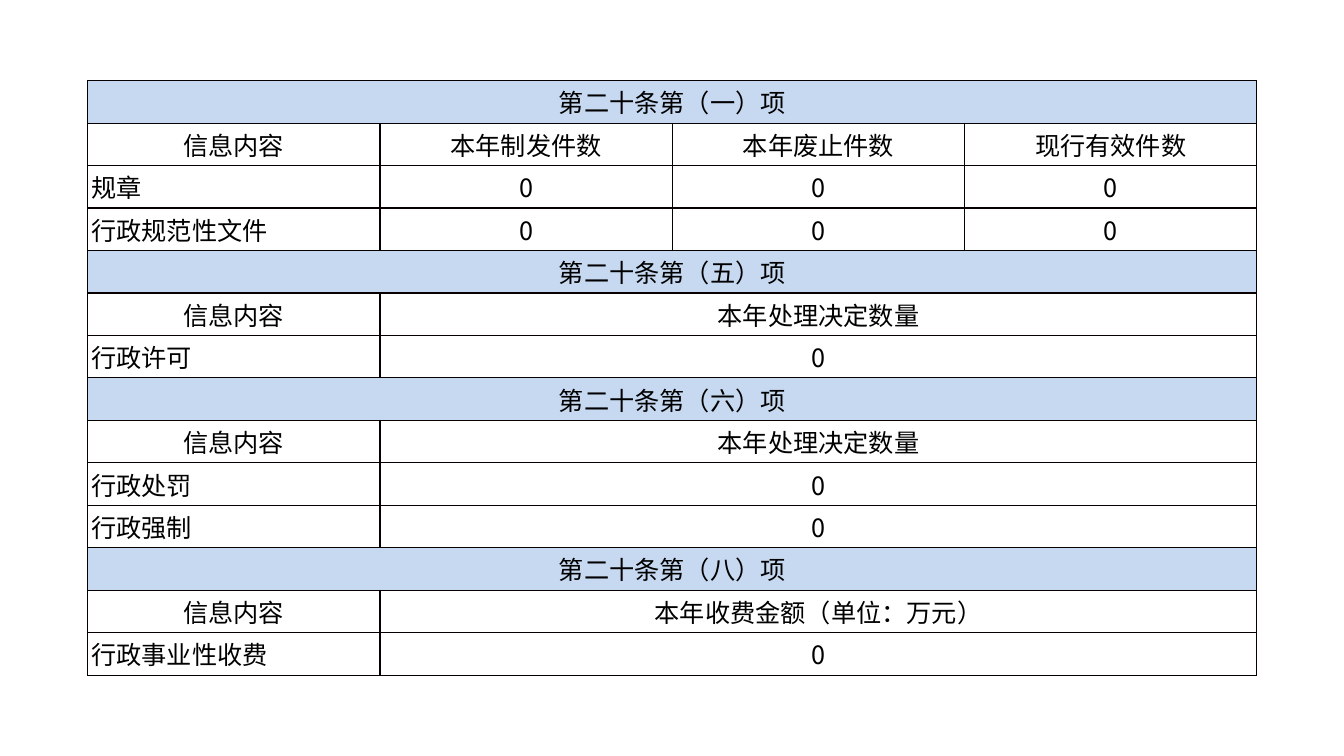
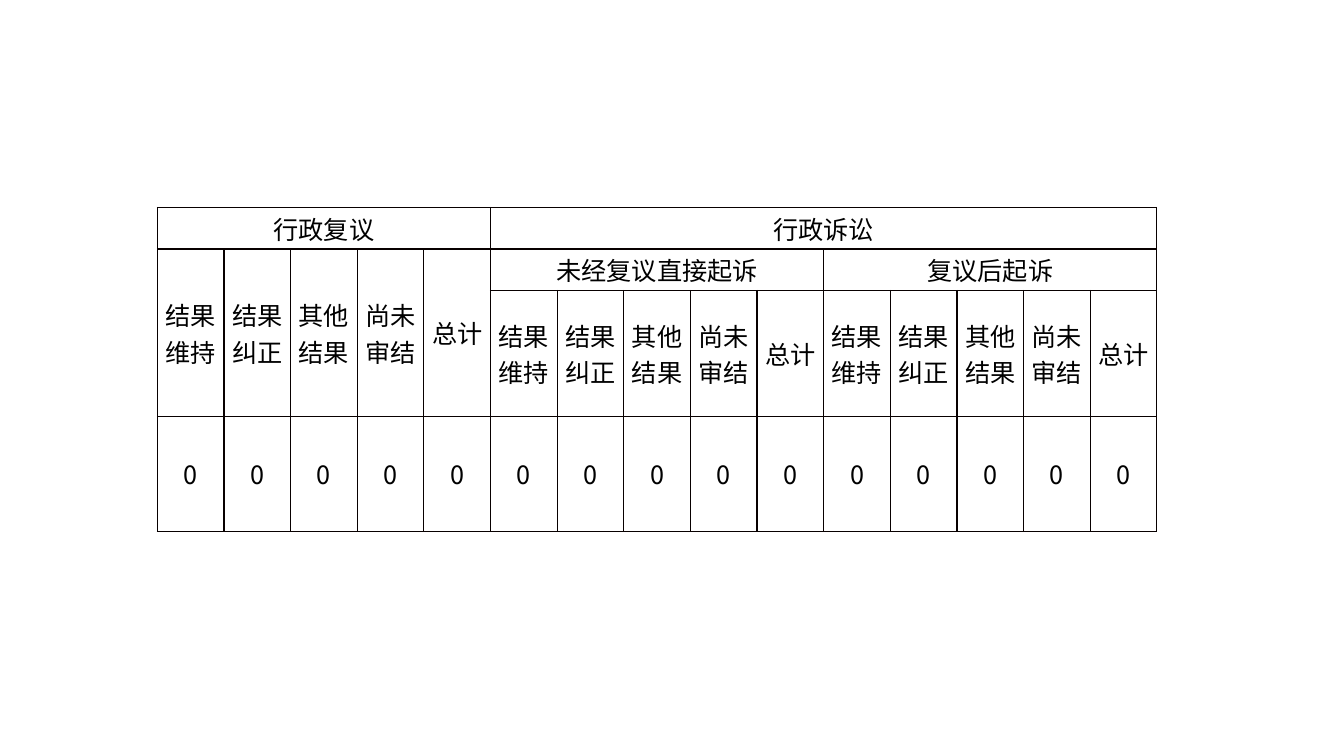
"""Build two slides of annual government disclosure statistics tables."""
from dataclasses import dataclass

from lxml import etree
from pptx import Presentation
from pptx.dml.color import RGBColor
from pptx.enum.text import MSO_ANCHOR, PP_ALIGN
from pptx.oxml.ns import qn
from pptx.slide import Slide
from pptx.table import Table, _Cell
from pptx.util import Pt

CENTER, LEFT = PP_ALIGN.CENTER, PP_ALIGN.LEFT
MIDDLE = MSO_ANCHOR.MIDDLE
COLORS = {"text": "000000", "border": "080000", "band": "C6D9F1"}
FONT = "Noto Sans CJK SC"
FONT_SIZE = 18
BORDER_WIDTH = 1
BLANK_LAYOUT = 6
RESULTS = ["结果维持", "结果纠正", "其他结果", "尚未审结", "总计"]


@dataclass(frozen=True)
class Grid:
    """Position and track sizes of a table, in points."""
    left: float
    top: float
    column_width: float
    column_count: int
    row_heights: list[float]
    side_margin: float


@dataclass(frozen=True)
class Entry:
    """One filled cell with its place, span and look."""
    row: int
    column: int
    text: str
    row_span: int = 1
    column_span: int = 1
    align: PP_ALIGN = CENTER
    banded: bool = False


@dataclass(frozen=True)
class Section:
    """One numbered item with its column headings and row labels."""
    item: str
    headings: list[str]
    labels: list[str]


SECTIONS = [
    Section("一", ["本年制发件数", "本年废止件数", "现行有效件数"], ["规章", "行政规范性文件"]),
    Section("五", ["本年处理决定数量"], ["行政许可"]),
    Section("六", ["本年处理决定数量"], ["行政处罚", "行政强制"]),
    Section("八", ["本年收费金额（单位：万元）"], ["行政事业性收费"]),
]
DISCLOSURE_GRID = Grid(62.6, 57.6, 208.8, 4, [30.35] * 14, 2.7)
REVIEW_GRID = Grid(112.4, 148.2, 47.6, 15, [29.7, 29.7, 90, 82], 5)


def add_borders(cell: _Cell) -> None:
    """Draw a solid line on all four sides of a cell."""
    properties = cell._tc.get_or_add_tcPr()
    for side in ("lnL", "lnR", "lnT", "lnB"):
        line = etree.SubElement(properties, qn(f"a:{side}"), w=str(Pt(BORDER_WIDTH)))
        fill = etree.SubElement(line, qn("a:solidFill"))
        etree.SubElement(fill, qn("a:srgbClr"), val=COLORS["border"])


def write_entry(table: Table, entry: Entry) -> None:
    """Merge, fill and label the cells of one entry."""
    cell = table.cell(entry.row, entry.column)
    if entry.row_span * entry.column_span > 1:
        cell.merge(table.cell(entry.row + entry.row_span - 1,
                              entry.column + entry.column_span - 1))
    if entry.banded:
        cell.fill.solid()
        cell.fill.fore_color.rgb = RGBColor.from_string(COLORS["band"])
    paragraph = cell.text_frame.paragraphs[0]
    paragraph.alignment = entry.align
    run = paragraph.add_run()
    run.text = entry.text
    run.font.size = Pt(FONT_SIZE)
    run.font.name = FONT
    run.font.color.rgb = RGBColor.from_string(COLORS["text"])
    etree.SubElement(run.font._element, qn("a:ea"), typeface=FONT)


def add_grid_table(slide: Slide, grid: Grid, entries: list[Entry]) -> None:
    """Add a bordered table and write its entries."""
    shape = slide.shapes.add_table(
        len(grid.row_heights), grid.column_count, Pt(grid.left), Pt(grid.top),
        Pt(grid.column_width * grid.column_count), Pt(sum(grid.row_heights)))
    table = shape.table
    table.first_row = table.horz_banding = False
    for column in table.columns:
        column.width = Pt(grid.column_width)
    for row, height in zip(table.rows, grid.row_heights):
        row.height = Pt(height)
    for cell in table.iter_cells():
        cell.margin_left = cell.margin_right = Pt(grid.side_margin)
        cell.margin_top = cell.margin_bottom = Pt(0)
        cell.vertical_anchor = MIDDLE
        add_borders(cell)
        cell.fill.background()
    for entry in entries:
        write_entry(table, entry)


def disclosure_entries() -> list[Entry]:
    """List the cells of the disclosure table, section by section."""
    entries = []
    row = 0
    for section in SECTIONS:
        entries.append(Entry(row, 0, f"第二十条第（{section.item}）项", column_span=4, banded=True))
        span = 3 // len(section.headings)
        zeros = ["0"] * len(section.headings)
        lines = [("信息内容", CENTER, section.headings)]
        lines += [(label, LEFT, zeros) for label in section.labels]
        for row, (label, align, values) in enumerate(lines, row + 1):
            entries.append(Entry(row, 0, label, align=align))
            entries += [Entry(row, 1 + index * span, value, column_span=span)
                        for index, value in enumerate(values)]
        row += 1
    return entries


def review_entries() -> list[Entry]:
    """List the cells of the review and litigation table."""
    group = len(RESULTS)
    entries = [
        Entry(0, 0, "行政复议", column_span=group),
        Entry(0, group, "行政诉讼", column_span=2 * group),
        Entry(1, group, "未经复议直接起诉", column_span=group),
        Entry(1, 2 * group, "复议后起诉", column_span=group),
    ]
    for column in range(3 * group):
        result = RESULTS[column % group]
        if column < group:
            entries.append(Entry(1, column, result, row_span=2))
        else:
            entries.append(Entry(2, column, result))
        entries.append(Entry(3, column, "0"))
    return entries


def main() -> None:
    """Build and save the presentation."""
    presentation = Presentation()
    presentation.slide_width = Pt(960)
    presentation.slide_height = Pt(540)
    layout = presentation.slide_layouts[BLANK_LAYOUT]
    for grid, entries in ((DISCLOSURE_GRID, disclosure_entries()),
                          (REVIEW_GRID, review_entries())):
        add_grid_table(presentation.slides.add_slide(layout), grid, entries)
    presentation.save("out.pptx")


if __name__ == "__main__":
    main()
